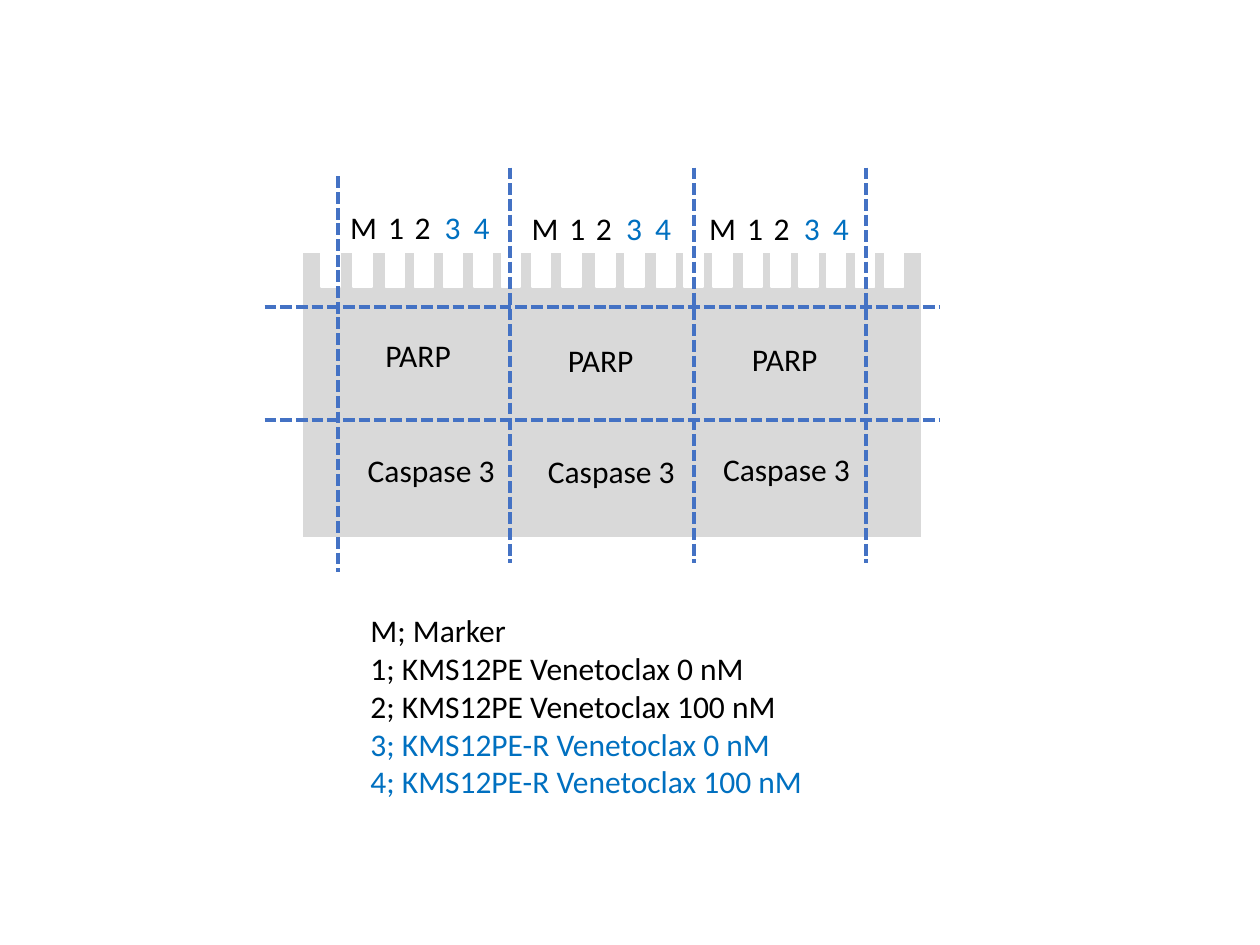
from lxml import etree
from pptx import Presentation
from pptx import util as u
from pptx.dml.color import RGBColor
from pptx.enum import dml, shapes, text
from pptx.oxml.ns import qn

BLACK = RGBColor(0x00, 0x00, 0x00)
WHITE = RGBColor(0xFF, 0xFF, 0xFF)
GREY = RGBColor(0xD9, 0xD9, 0xD9)
BLUE = RGBColor(0x00, 0x70, 0xC0)
DASH = RGBColor(0x44, 0x72, 0xC4)


class Board:
    """Style and current slide; lengths are cells of a 100 by 75 grid."""
    font, size = "Calibri", u.Pt(18)

    def __init__(self, deck):
        self.slide = deck.slides.add_slide(deck.slide_layouts[1])
        self.cell = deck.slide_width / 100
        title = self.slide.shapes.title
        title.element.getparent().remove(title.element)

    def grid(self, *cells):
        return [u.Emu(round(n * self.cell)) for n in cells]

    def ink_run(self, para, words, ink):
        run = para.add_run()
        run.text = words
        run.font.name, run.font.size = self.font, self.size
        run.font.color.rgb = ink

    def legend(self, items, *place):
        body = self.slide.placeholders[1]
        body.left, body.top, body.width, body.height = self.grid(*place)
        frame = body.text_frame
        frame.auto_size = text.MSO_AUTO_SIZE.SHAPE_TO_FIT_TEXT
        for i, (words, ink) in enumerate(items):
            para = frame.add_paragraph() if i else frame.paragraphs[0]
            para.space_before = u.Pt(0)
            props = para._p.get_or_add_pPr()
            props.set("marL", "0")
            props.set("indent", "0")
            etree.SubElement(props, qn("a:buNone"))
            self.ink_run(para, words, ink)

    def label(self, words, *place, ink=BLACK, pad=True):
        frame = self.slide.shapes.add_textbox(*self.grid(*place)).text_frame
        frame.word_wrap = False
        frame.auto_size = text.MSO_AUTO_SIZE.SHAPE_TO_FIT_TEXT
        if not pad:
            frame.margin_left = frame.margin_right = 0
            frame.margin_top = frame.margin_bottom = 0
        self.ink_run(frame.paragraphs[0], words, ink)

    def block(self, fill, *place):
        box = self.slide.shapes.add_shape(
            shapes.MSO_SHAPE.RECTANGLE, *self.grid(*place))
        box.shadow.inherit = False
        box.fill.solid()
        box.fill.fore_color.rgb = fill
        box.line.color.rgb = WHITE
        box.line.width = u.Pt(1)

    def cut(self, *ends):
        """Draw a dashed line where the gel is cut."""
        rule = self.slide.shapes.add_connector(
            shapes.MSO_CONNECTOR.STRAIGHT, *self.grid(*ends))
        rule.line.color.rgb = DASH
        rule.line.width = u.Pt(2.25)
        rule.line.dash_style = dml.MSO_LINE.SQUARE_DOT
        etree.SubElement(rule._element.spPr, qn("a:effectLst"))


LEGEND = [
    ("M; Marker", BLACK),
    ("1; KMS12PE Venetoclax 0 nM", BLACK),
    ("2; KMS12PE Venetoclax 100 nM", BLACK),
    ("3; KMS12PE-R Venetoclax 0 nM", BLUE),
    ("4; KMS12PE-R Venetoclax 100 nM", BLUE),
]
WELLS = [25.5, 28, 30.6, 32.9, 35.2, 37.6, 39.8, 42.2, 44.6, 47.3,
         49.6, 52.1, 54.3, 56.6, 59, 61.2, 63.4, 65.6, 67.9, 70.2]
LANES = [("1", 4, BLACK), ("2", 6.1, BLACK), ("3", 8.5, BLUE), ("4", 10.8, BLUE)]
# left and top of each panel's marker, PARP and Caspase 3 labels
PANELS = [
    ((26.8, 16), (29.6, 26.2), (28.2, 35.3)),
    ((41.2, 16.1), (44.1, 26.6), (42.5, 35.4)),
    ((55.3, 16.1), (58.7, 26.5), (56.4, 35.2)),
]
CUTS = [(26.8, 14), (40.5, 13.3), (55.1, 13.3), (68.7, 13.3)]


def main():
    deck = Presentation()
    deck.slide_width, deck.slide_height = u.Inches(10), u.Inches(7.5)
    board = Board(deck)
    board.legend(LEGEND, 28.4, 48, 39.5, 16.2)

    board.block(GREY, 24, 20, 49.2, 22.7)
    for x in WELLS:
        board.block(WHITE, x, 20, 1.5, 2.8)

    for x, y in CUTS:
        board.cut(x, y, x, y + 31.4)
    for y in (24.4, 33.3):
        board.cut(21, y, 74.6, y)

    for (x, y), parp, caspase in PANELS:
        board.label("M", x, y, 4.2, 4)
        for name, step, ink in LANES:
            board.label(name, x + step, y + 0.5, 1.3, 3, ink=ink, pad=False)
        board.label("PARP", *parp, 7.3, 4)
        board.label("Caspase 3", *caspase, 12.2, 4)

    deck.save("out.pptx")


if __name__ == "__main__":
    main()
